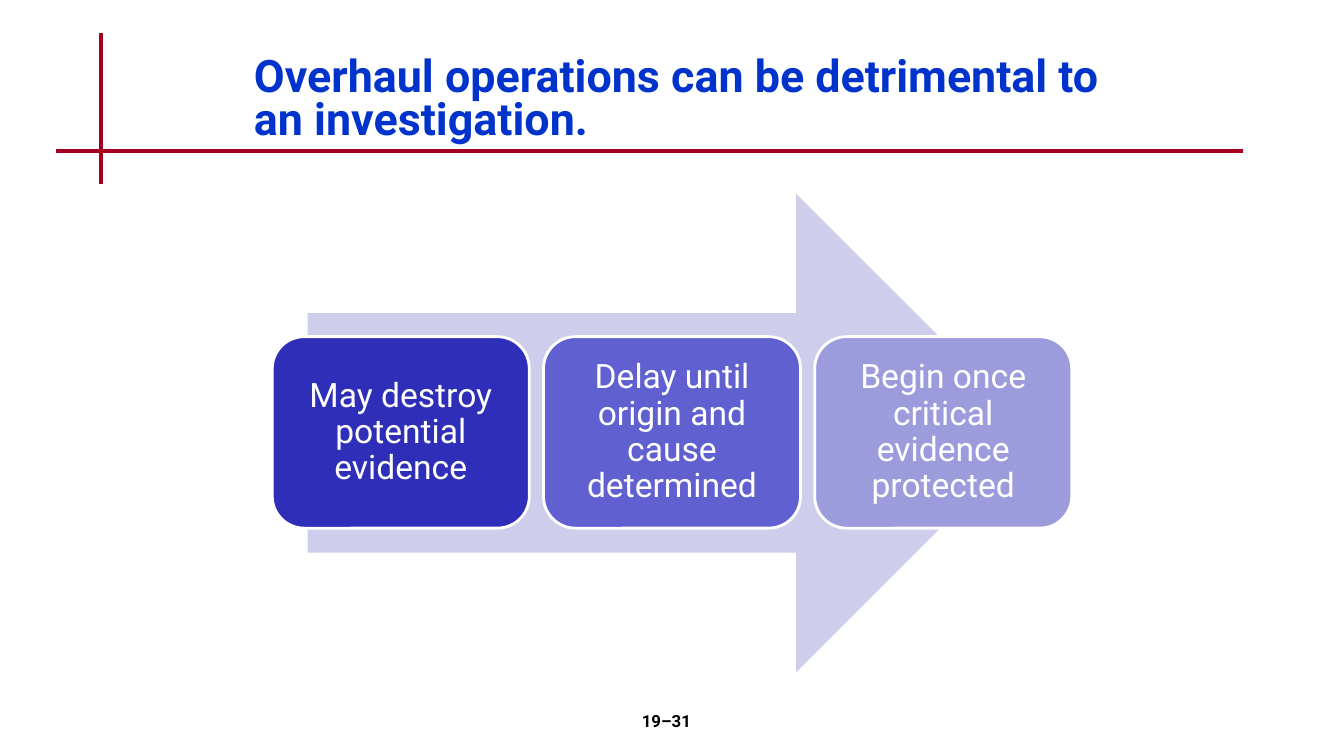
from lxml import etree
from pptx import Presentation
from pptx.dml.color import RGBColor
from pptx.enum import shapes, text
from pptx.oxml.ns import qn
from pptx.util import Inches, Pt

TITLE = "Overhaul operations can be detrimental to an investigation."
PAGE_NUMBER = "19–31"
FONT = "Roboto"
BLUE = RGBColor(0x00, 0x33, 0xCC)
RED = RGBColor(0xA5, 0x00, 0x21)
LAVENDER = RGBColor(0xCE, 0xCE, 0xEC)
WHITE = RGBColor(0xFF, 0xFF, 0xFF)
BLACK = RGBColor(0x00, 0x00, 0x00)
STEPS = [
    ("May destroy potential evidence", RGBColor(0x2E, 0x2E, 0xB9)),
    ("Delay until origin and cause determined", RGBColor(0x60, 0x60, 0xD0)),
    ("Begin once critical evidence protected", RGBColor(0x9C, 0x9C, 0xDD)),
]
RULES = [(1, 0.33, 1, 1.83), (0.56, 1.5, 12.33, 1.5)]
STEP_LEFT, STEP_TOP, STEP_WIDTH, STEP_HEIGHT = 2.7, 3.34, 2.55, 1.9
STEP_PITCH = 2.69
STEP_INSET = 0.19


def write(shape, wording, size, color, bold, alignment, anchor):
    frame = shape.text_frame
    frame.word_wrap = True
    frame.vertical_anchor = anchor
    paragraph = frame.paragraphs[0]
    paragraph.text = wording
    paragraph.alignment = alignment
    font = paragraph.font
    font.name, font.size, font.bold = FONT, Pt(size), bold
    font.color.rgb = color
    return paragraph


def add_rule(slide, ends):
    rule = slide.shapes.add_connector(
        shapes.MSO_CONNECTOR.STRAIGHT, *(Inches(end) for end in ends))
    rule.line.color.rgb = RED
    rule.line.width = Pt(3)
    etree.SubElement(rule._element.spPr, qn("a:effectLst"))


def add_filled(slide, kind, box, color):
    shape = slide.shapes.add_shape(kind, *(Inches(length) for length in box))
    shape.shadow.inherit = False
    shape.fill.solid()
    shape.fill.fore_color.rgb = color
    shape.line.fill.background()
    return shape


def add_step(slide, index, wording, color):
    box = (STEP_LEFT + index * STEP_PITCH, STEP_TOP, STEP_WIDTH, STEP_HEIGHT)
    step = add_filled(slide, shapes.MSO_SHAPE.ROUNDED_RECTANGLE, box, color)
    step.line.color.rgb = WHITE
    step.line.width = Pt(2)
    frame = step.text_frame
    frame.margin_left = frame.margin_right = Inches(STEP_INSET)
    frame.margin_top = frame.margin_bottom = Inches(STEP_INSET)
    paragraph = write(step, wording, 24, WHITE, False,
                      text.PP_ALIGN.CENTER, text.MSO_ANCHOR.MIDDLE)
    paragraph.line_spacing = 0.9


def main():
    presentation = Presentation()
    presentation.slide_width = Inches(13.33)
    presentation.slide_height = Inches(7.5)
    slide = presentation.slides.add_slide(presentation.slide_layouts[6])

    for ends in RULES:
        add_rule(slide, ends)

    title = slide.shapes.add_textbox(Inches(2.42), Inches(0.5), Inches(9.03), Inches(1))
    paragraph = write(title, TITLE, 32, BLUE, True,
                      text.PP_ALIGN.LEFT, text.MSO_ANCHOR.MIDDLE)
    paragraph.line_spacing = 0.8

    number = slide.shapes.add_textbox(Inches(5.22), Inches(7), Inches(2.78), Inches(0.5))
    write(number, PAGE_NUMBER, 12, BLACK, True,
          text.PP_ALIGN.CENTER, text.MSO_ANCHOR.TOP)

    add_filled(slide, shapes.MSO_SHAPE.RIGHT_ARROW, (3.05, 1.92, 7.22, 4.75), LAVENDER)
    for index, (wording, color) in enumerate(STEPS):
        add_step(slide, index, wording, color)

    presentation.save("out.pptx")


if __name__ == "__main__":
    main()
